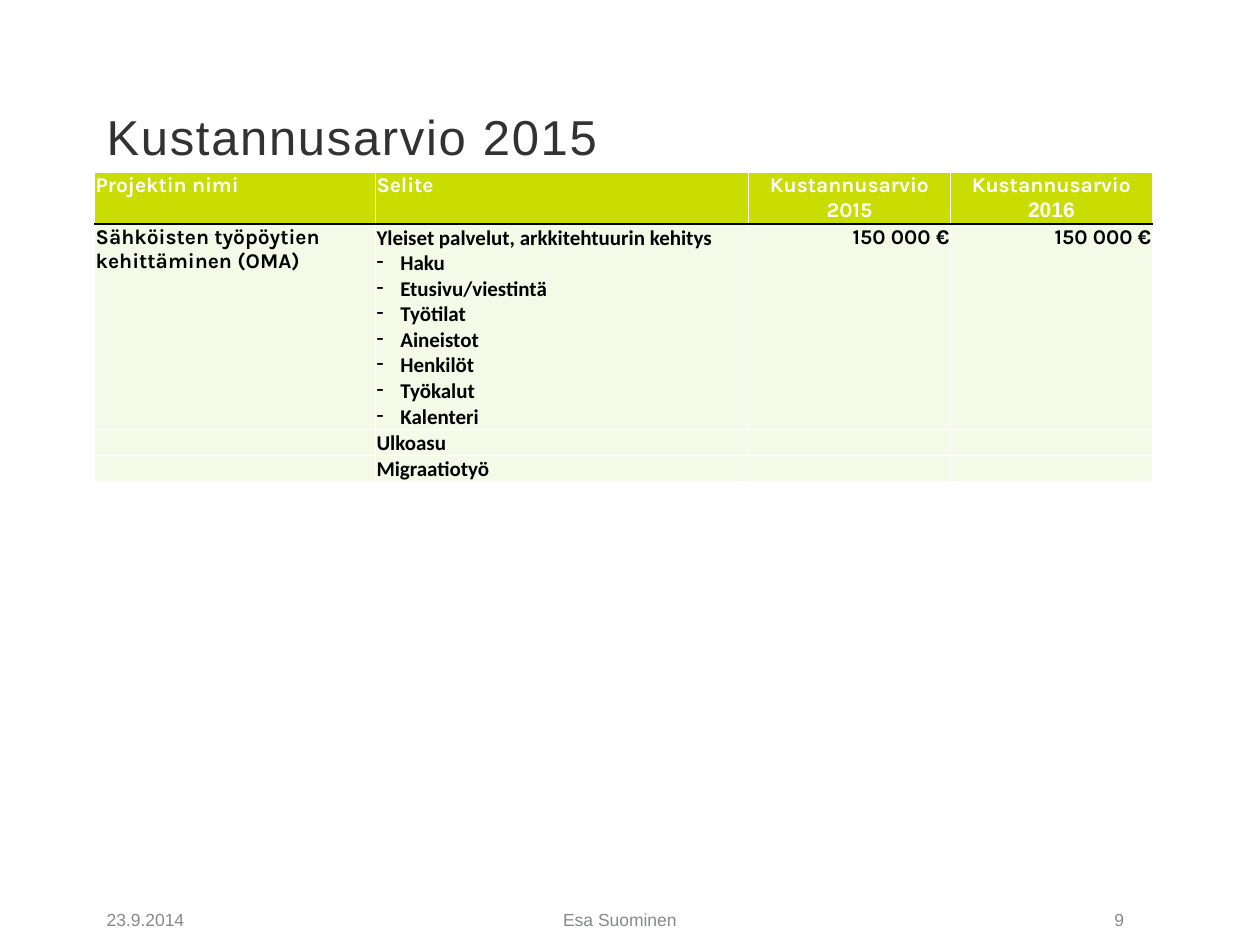
from dataclasses import dataclass
from typing import Optional

import lxml.etree
import pptx
import pptx.dml.color
import pptx.enum.text
import pptx.oxml.ns
import pptx.util

Cm = pptx.util.Cm
Pt = pptx.util.Pt
RGBColor = pptx.dml.color.RGBColor
Align = pptx.enum.text.PP_ALIGN
Anchor = pptx.enum.text.MSO_ANCHOR
qn = pptx.oxml.ns.qn

WHITE = RGBColor(0xFF, 0xFF, 0xFF)
BLACK = RGBColor(0x00, 0x00, 0x00)
CHARCOAL = RGBColor(0x32, 0x32, 0x32)
GREY = RGBColor(0x87, 0x89, 0x89)
LIME = RGBColor(0xC9, 0xDD, 0x03)
PALE_LIME = RGBColor(0xF5, 0xF9, 0xE7)

COLUMN_WIDTHS = (5.66, 7.52, 4.07, 4.07)
ROW_HEIGHTS = (0.99, 4.14, 0.53, 0.53)
CELL_MARGINS = {
    "margin_left": Cm(0.02),
    "margin_right": Cm(0.02),
    "margin_top": Cm(0.02),
    "margin_bottom": Cm(0),
}


@dataclass(frozen=True)
class Label:
    text: str
    left: float
    top: float
    width: float
    height: float
    size: int
    color: RGBColor
    align: Align = Align.LEFT
    anchor: Anchor = Anchor.TOP
    spacing: Optional[int] = None


@dataclass(frozen=True)
class Entry:
    runs: tuple[tuple[str, str], ...] = ()
    align: Align = Align.LEFT
    items: tuple[str, ...] = ()


LABELS = (
    Label("Kustannusarvio 2015", 1.9, 1.98, 21.59, 1.47, 28, CHARCOAL,
          anchor=Anchor.BOTTOM, spacing=100),
    Label("Esa Suominen", 6.35, 18.19, 12.29, 0.86, 10, GREY, Align.CENTER),
    Label("9", 18.85, 18.19, 4.06, 0.86, 10, GREY, Align.RIGHT),
    Label("23.9.2014", 1.9, 18.19, 4.24, 0.86, 10, GREY),
)

EMPTY = Entry()
COST = Entry((("150 000 €", "Karla"),), Align.RIGHT)
ROWS = (
    (
        Entry((("Projektin nimi", "Karla"),)),
        Entry((("Selite", "Karla"),)),
        Entry((("Kustannusarvio 2015", "Karla"),), Align.CENTER),
        Entry((("Kustannusarvio ", "Karla"), ("2016", "Arial")), Align.CENTER),
    ),
    (
        Entry((("Sähköisten työpöytien kehittäminen (OMA)", "Karla"),)),
        Entry(
            (("Yleiset palvelut, arkkitehtuurin kehitys", "Calibri"),),
            items=("Haku", "Etusivu/viestintä", "Työtilat", "Aineistot",
                   "Henkilöt", "Työkalut", "Kalenteri"),
        ),
        COST,
        COST,
    ),
    (EMPTY, Entry((("Ulkoasu", "Calibri"),)), EMPTY, EMPTY),
    (EMPTY, Entry((("Migraatiotyö", "Calibri"),)), EMPTY, EMPTY),
)


def apply_format(target, values: dict) -> None:
    for attribute, value in values.items():
        setattr(target, attribute, value)


def add_run(paragraph, text: str, font: str, size: int, color: RGBColor, bold: bool):
    run = paragraph.add_run()
    run.text = text
    apply_format(run.font, {"name": font, "size": Pt(size), "bold": bold})
    run.font.color.rgb = color
    return run


def add_label(slide, label: Label) -> None:
    box = slide.shapes.add_textbox(
        Cm(label.left), Cm(label.top), Cm(label.width), Cm(label.height))
    apply_format(box.text_frame,
                 {"word_wrap": True, "vertical_anchor": label.anchor})
    paragraph = box.text_frame.paragraphs[0]
    paragraph.alignment = label.align
    run = add_run(paragraph, label.text, "Arial", label.size, label.color, False)
    if label.spacing is not None:
        run.font._element.set("spc", str(label.spacing))


def add_dash(paragraph) -> None:
    properties = paragraph._p.get_or_add_pPr()
    properties.set("marL", str(Cm(0.48)))
    properties.set("indent", str(-Cm(0.48)))
    lxml.etree.SubElement(properties, qn("a:buChar"), char="-")


def set_borders(cell, colors: dict[str, RGBColor]) -> None:
    properties = cell._tc.get_or_add_tcPr()
    for position, (side, color) in enumerate(colors.items()):
        line = lxml.etree.Element(qn(f"a:ln{side}"), w=str(Pt(1)))
        fill = lxml.etree.SubElement(line, qn("a:solidFill"))
        lxml.etree.SubElement(fill, qn("a:srgbClr"), val=str(color))
        properties.insert(position, line)


def fill_cell(cell, entry: Entry, row: int) -> None:
    apply_format(cell, CELL_MARGINS)
    cell.fill.solid()
    cell.fill.fore_color.rgb = PALE_LIME if row else LIME
    set_borders(cell, {
        "L": WHITE,
        "R": WHITE,
        "T": BLACK if row == 1 else WHITE,
        "B": BLACK if row == 0 else WHITE,
    })
    color = BLACK if row else WHITE
    paragraph = cell.text_frame.paragraphs[0]
    paragraph.alignment = entry.align
    for text, font in entry.runs:
        add_run(paragraph, text, font, 12, color, True)
    if not entry.runs:
        lxml.etree.SubElement(paragraph._p, qn("a:endParaRPr"), sz="1200")
    for item in entry.items:
        paragraph = cell.text_frame.add_paragraph()
        add_dash(paragraph)
        add_run(paragraph, item, "Calibri", 12, color, True)


def add_cost_table(slide) -> None:
    costs = slide.shapes.add_table(
        len(ROWS), len(COLUMN_WIDTHS), Cm(1.91), Cm(3.48),
        Cm(sum(COLUMN_WIDTHS)), Cm(sum(ROW_HEIGHTS))).table
    costs.horz_banding = False
    for column, width in zip(costs.columns, COLUMN_WIDTHS):
        column.width = Cm(width)
    for row, height in zip(costs.rows, ROW_HEIGHTS):
        row.height = Cm(height)
    for row, entries in enumerate(ROWS):
        for column, entry in enumerate(entries):
            fill_cell(costs.cell(row, column), entry, row)


def main() -> None:
    deck = pptx.Presentation()
    apply_format(deck, {"slide_width": Cm(25.4), "slide_height": Cm(19.05)})
    slide = deck.slides.add_slide(deck.slide_layouts[6])
    for label in LABELS:
        add_label(slide, label)
    add_cost_table(slide)
    deck.save("out.pptx")


if __name__ == "__main__":
    main()
